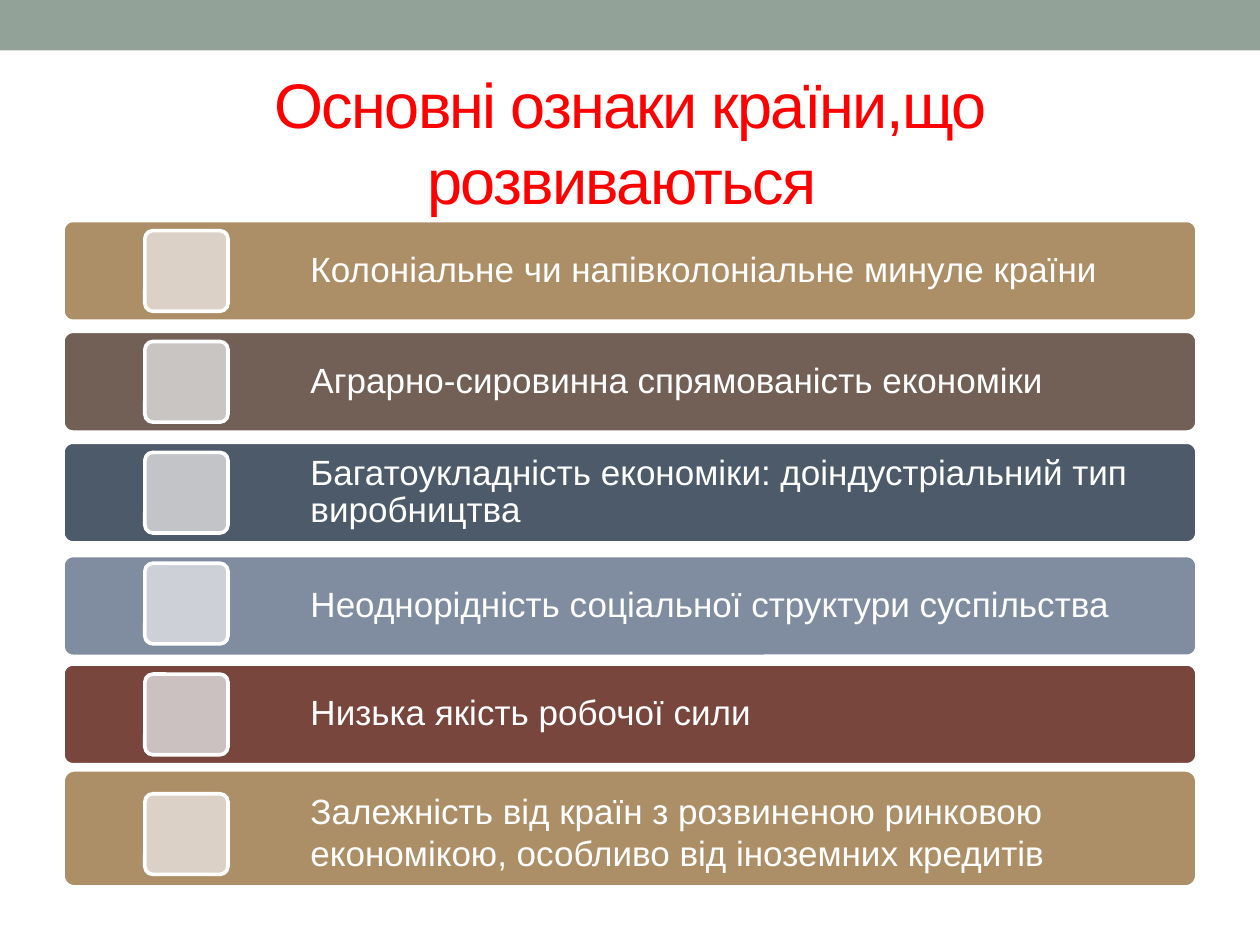
from dataclasses import dataclass

from pptx import Presentation
from pptx.dml.color import RGBColor
from pptx.enum.shapes import MSO_SHAPE
from pptx.enum.text import MSO_ANCHOR, PP_ALIGN
from pptx.util import Pt

RECT = MSO_SHAPE.RECTANGLE
ROUND = MSO_SHAPE.ROUNDED_RECTANGLE
MIDDLE = MSO_ANCHOR.MIDDLE
LEFT, CENTER = PP_ALIGN.LEFT, PP_ALIGN.CENTER


@dataclass(frozen=True)
class Theme:
    font: str = "Arial"
    head: int = 36
    body: int = 20
    red: str = "FF0000"
    white: str = "FFFFFF"
    band: str = "93A299"
    sand: str = "AD8F67"
    sand_tint: str = "DBD1C7"
    brown: str = "726056"
    brown_tint: str = "C9C5C3"
    slate: str = "4C5A6A"
    slate_tint: str = "C2C4C7"
    blue: str = "808DA0"
    blue_tint: str = "CDD0D6"
    rust: str = "79463D"
    rust_tint: str = "CBC1C0"
    edge: float = 2.08


def write(frame, text, *, font, size, color, align=LEFT, lines=1.0, track=0):
    """Fill a text frame; track is the letter spacing in points."""
    para = frame.paragraphs[0]
    para.alignment = align
    para.line_spacing = lines
    run = para.add_run()
    run.text = text
    run.font.name = font
    run.font.size = Pt(size)
    run.font.color.rgb = RGBColor.from_string(color)
    if track:
        run.font._element.set("spc", str(track * 100))


class Deck:
    def __init__(self, theme):
        self.theme = theme
        self.file = Presentation()
        self.file.slide_width, self.file.slide_height = Pt(720), Pt(540)
        self.slide = self.file.slides.add_slide(self.file.slide_layouts[6])

    def block(self, kind, box, fill, edge=None):
        shape = self.slide.shapes.add_shape(kind, *map(Pt, box))
        shape.shadow.inherit = False
        shape.fill.solid()
        shape.fill.fore_color.rgb = RGBColor.from_string(fill)
        if edge:
            shape.line.color.rgb = RGBColor.from_string(edge)
            shape.line.width = Pt(self.theme.edge)
        else:
            shape.line.fill.background()
        return shape

    def card(self, box, fill):
        shape = self.block(ROUND, box, fill, self.theme.white)
        shape.adjustments[0] = 0.1

    def label(self, box, text, pad, **style):
        frame = self.slide.shapes.add_textbox(*map(Pt, box)).text_frame
        frame.word_wrap = True
        frame.vertical_anchor = MIDDLE
        frame.margin_left = frame.margin_right = Pt(pad[0])
        frame.margin_top = frame.margin_bottom = Pt(pad[1])
        write(frame, text, font=self.theme.font, **style)

    def row(self, top, tall, tile, text, fill, tint, lines=0.9, drop=0):
        """Draw a bar, its text and its tile; drop lowers the text."""
        self.card((36, top, 648, tall), fill)
        self.label((171.4, top + drop, 512.6, tall), text, (6, 6),
                   size=self.theme.body, color=self.theme.white, lines=lines)
        self.card((82.8, tile, 47.5, 46.1), tint)


def main():
    look = Theme()
    deck = Deck(look)
    deck.block(RECT, (0, 0, 720, 28.8), look.band)
    deck.label((36, 41.8, 648, 77.8), "Основні ознаки країни,що розвиваються ",
               (7.2, 3.6), size=look.head, color=look.red, align=CENTER,
               track=-1)

    first, pitch, tall, inset = 126, 63.36, 57.6, 5.8
    rows = [
        ("Колоніальне чи напівколоніальне минуле країни",
         look.sand, look.sand_tint, 0),
        ("Аграрно-сировинна спрямованість економіки",
         look.brown, look.brown_tint, 0),
        ("Багатоукладність економіки: доіндустріальний тип виробництва",
         look.slate, look.slate_tint, 0),
        ("Неоднорідність соціальної структури суспільства",
         look.blue, look.blue_tint, 1.4),
        ("Низька якість робочої сили",
         look.rust, look.rust_tint, 0),
    ]
    for i, (text, fill, tint, shift) in enumerate(rows):
        top = first + i * pitch
        deck.row(top + shift, tall, top + inset, text, fill, tint)

    # The last bar is taller, with looser text set a little low
    deck.row(439.9, 67, 453.6,
             "Залежність від країн з розвиненою ринковою економікою, "
             "особливо від іноземних кредитів",
             look.sand, look.sand_tint, lines=1.0, drop=2)
    deck.file.save("out.pptx")


if __name__ == "__main__":
    main()
